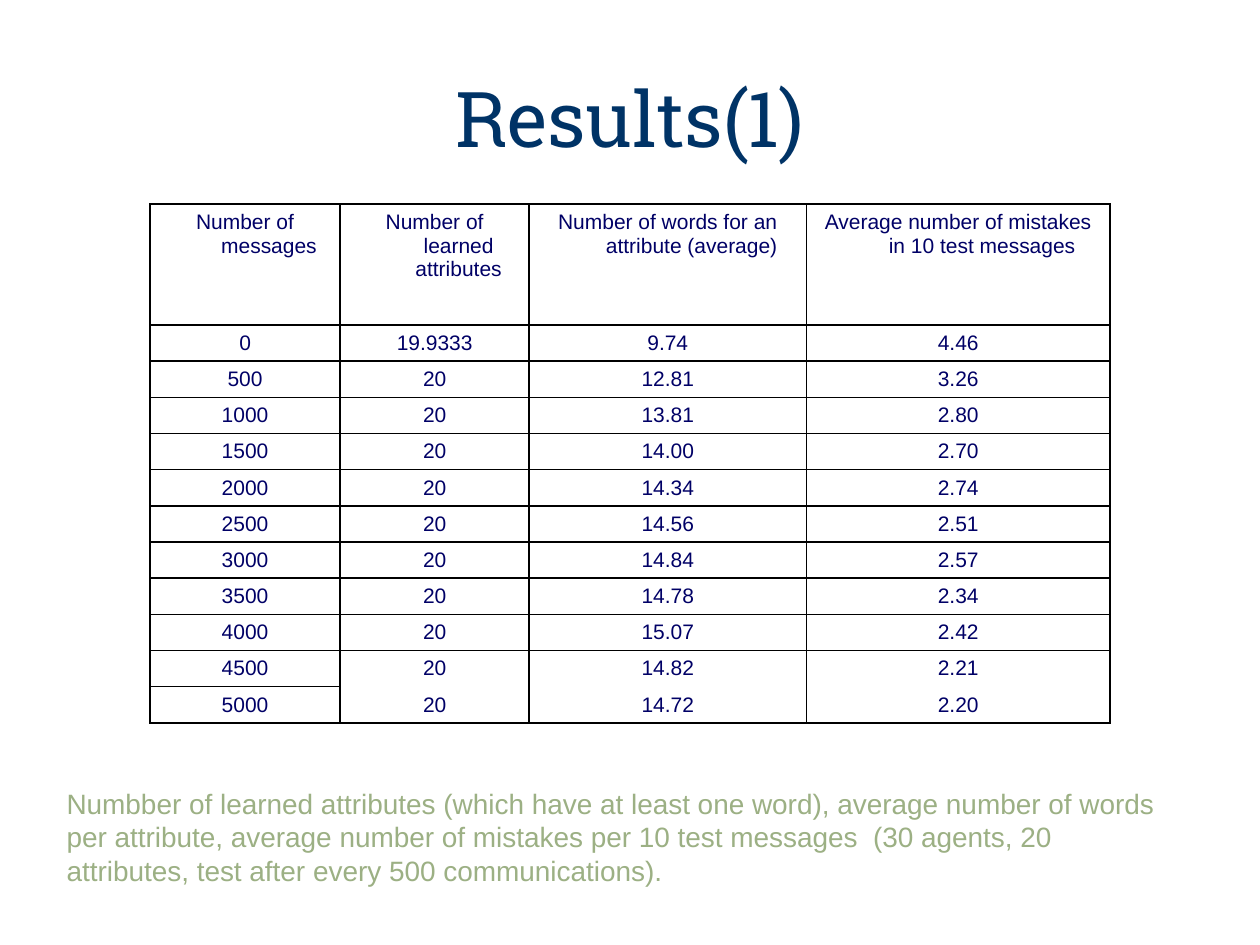
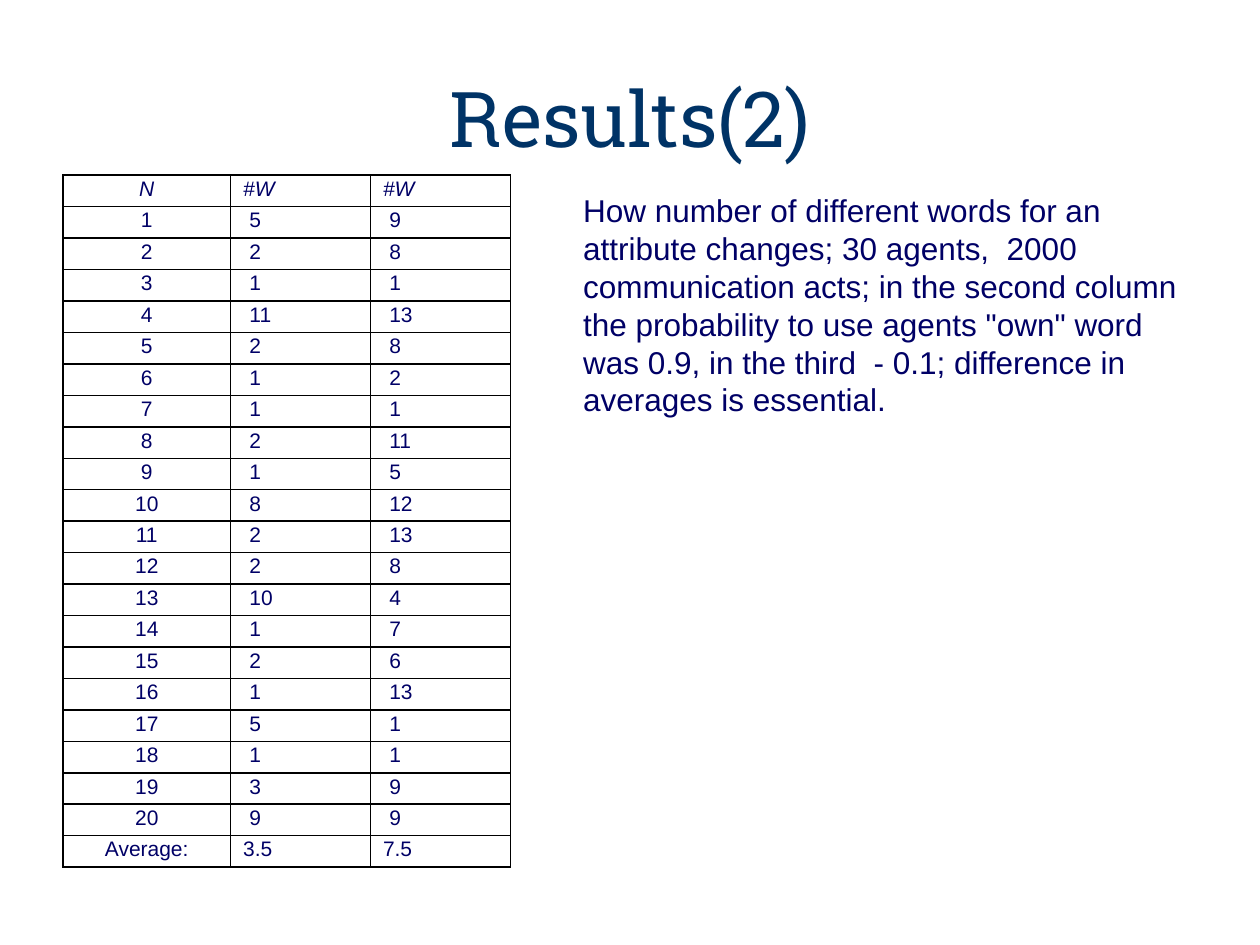
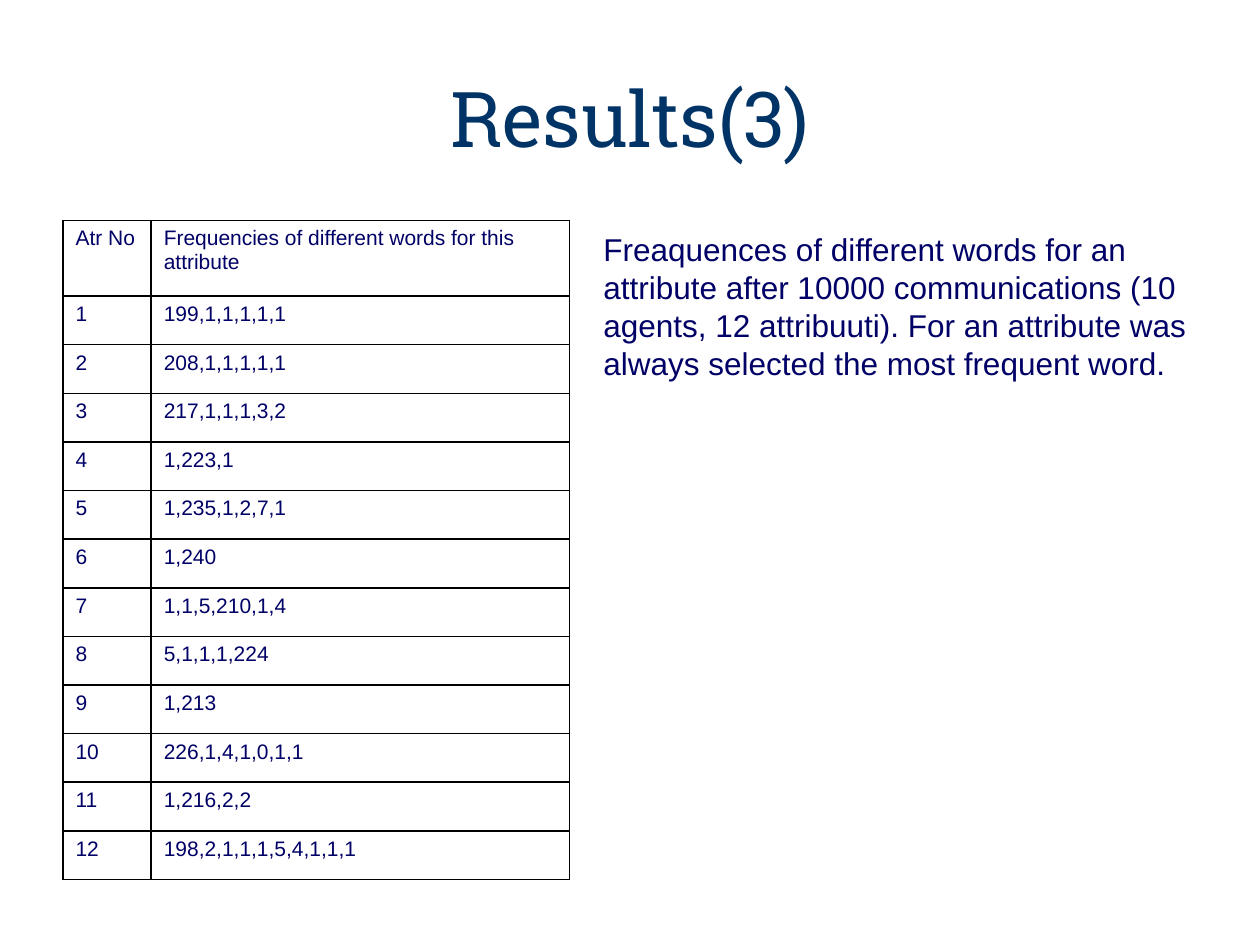
"""Build three slides of experiment results, each with a table and a caption."""
import dataclasses

import lxml.etree
import pptx
import pptx.dml.color
import pptx.enum.text
import pptx.oxml.ns
import pptx.util

Inches = pptx.util.Inches
Align = pptx.enum.text.PP_ALIGN


@dataclasses.dataclass(frozen=True)
class Theme:
    head: str = "003366"
    ink: str = "000066"
    soft: str = "9CB084"
    rule: str = "000000"
    serif: str = "Roboto Slab"
    sans: str = "Arial"
    title: int = 44
    text: int = 18
    note: int = 16
    cell: int = 12
    line: int = 1


class Deck:
    def __init__(self, theme):
        self.theme = theme
        self.show = pptx.Presentation()
        self.show.slide_width = Inches(10)
        self.show.slide_height = Inches(7.5)
        self.slide = None

    def style(self, para, face, size, tint, slant=False):
        for run in para.runs:
            font = run.font
            font.name = face
            font.size = pptx.util.Pt(size)
            font.italic = slant
            font.color.rgb = pptx.dml.color.RGBColor.from_string(tint)

    def page(self, title):
        self.slide = self.show.slides.add_slide(self.show.slide_layouts[5])
        box = self.slide.shapes.title
        box.left, box.top = Inches(0.5), Inches(0.3)
        box.width, box.height = Inches(9), Inches(1.25)
        frame = box.text_frame
        frame.text = title
        frame.vertical_anchor = pptx.enum.text.MSO_ANCHOR.MIDDLE
        para = frame.paragraphs[0]
        para.alignment = Align.CENTER
        self.style(para, self.theme.serif, self.theme.title, self.theme.head)

    def note(self, text, area, size, tint):
        box = self.slide.shapes.add_textbox(*map(Inches, area))
        frame = box.text_frame
        frame.word_wrap = True
        frame.auto_size = pptx.enum.text.MSO_AUTO_SIZE.SHAPE_TO_FIT_TEXT
        frame.text = text
        self.style(frame.paragraphs[0], self.theme.sans, size, tint)

    def edge(self, cell, bare=""):
        props = cell._tc.get_or_add_tcPr()
        qn = pptx.oxml.ns.qn
        for side in "LRTB":
            line = lxml.etree.SubElement(props, qn("a:ln" + side))
            line.set("w", str(pptx.util.Pt(self.theme.line)))
            if side in bare:
                lxml.etree.SubElement(line, qn("a:noFill"))
            else:
                fill = lxml.etree.SubElement(line, qn("a:solidFill"))
                tint = lxml.etree.SubElement(fill, qn("a:srgbClr"))
                tint.set("val", self.theme.rule)

    def table(self, rows, spot, cols, high, head, aligns,
              pad=None, space=None, slant=False, bare=None):
        size = (sum(cols), high)
        grid = self.slide.shapes.add_table(
            len(rows), len(cols), *map(Inches, spot + size)).table
        grid.first_row = grid.horz_banding = False
        for col, wide in zip(grid.columns, cols):
            col.width = Inches(wide)
        for num, row in enumerate(grid.rows):
            row.height = Inches(head if num == 0 else (high - head) / (len(rows) - 1))
            for col, cell in enumerate(row.cells):
                para = cell.text_frame.paragraphs[0]
                para.text = rows[num][col]
                para.alignment = aligns[col]
                if space:
                    para.line_spacing = space
                left, first = pad(num, col) if pad else (0, 0)
                if left:
                    props = para._p.get_or_add_pPr()
                    props.set("marL", str(Inches(left)))
                    props.set("indent", str(Inches(first)))
                self.style(para, self.theme.sans, self.theme.cell,
                           self.theme.ink, slant and num == 0)
                self.edge(cell, bare(num, col) if bare else "")
                cell.fill.background()


def growth(deck):
    names = ["Number of messages", "Number of learned attributes",
             "Number of words for an attribute (average)",
             "Average number of mistakes in 10 test messages"]
    words = "9.74 12.81 13.81 14.00 14.34 14.56 14.84 14.78 15.07 14.82 14.72".split()
    fails = "4.46 3.26 2.80 2.70 2.74 2.51 2.57 2.34 2.42 2.21 2.20".split()
    rows = [names]
    for num, pair in enumerate(zip(words, fails)):
        rows.append([str(num * 500), "20" if num else "19.9333", *pair])
    last = len(rows) - 1
    gaps = {last - 1: "B", last: "T"}
    deck.page("Results(1)")
    deck.table(rows, (1.19, 1.62), (1.51, 1.5, 2.2, 2.41), 4.12, 0.96,
               [Align.CENTER] * 4,
               pad=lambda num, col: (0.38, -0.38),
               bare=lambda num, col: gaps.get(num, "") if col else "")
    deck.note("Numbber of learned attributes (which have at least one word), "
              "average number of words per attribute, average number of mistakes "
              "per 10 test messages  (30 agents, 20 attributes, test after every "
              "500 communications).",
              (0.43, 6.19, 8.98, 0.9), deck.theme.note, deck.theme.soft)


def spread(deck):
    own = "5 2 1 11 2 1 1 2 1 8 2 2 10 1 2 1 5 1 3 9".split()
    rare = "9 8 1 13 8 2 1 11 5 12 13 8 4 7 6 13 1 1 9 9".split()
    rows = [["N", "#W", "#W"]]
    rows += [[str(num), *pair] for num, pair in enumerate(zip(own, rare), 1)]
    rows.append(["Average:", "3.5", "7.5"])
    last = len(rows) - 1
    deck.page("Results(2)")
    deck.table(rows, (0.5, 1.39), (1.33, 1.11, 1.11), 5.49, 0.25,
               [Align.CENTER, Align.LEFT, Align.LEFT], space=0.8, slant=True,
               pad=lambda num, col: (0.05 if col and 0 < num < last else 0, 0))
    deck.note("How number of different words for an attribute changes; 30 agents,  "
              "2000 communication acts; in the second column the probability to use "
              'agents "own" word was 0.9, in the third  - 0.1; difference in '
              "averages is essential.",
              (4.53, 1.47, 5.08, 1.9), deck.theme.text, deck.theme.ink)


def counts(deck):
    freqs = ["199,1,1,1,1,1", "208,1,1,1,1,1", "217,1,1,1,3,2", "1,223,1",
             "1,235,1,2,7,1", "1,240", "1,1,5,210,1,4", "5,1,1,1,224", "1,213",
             "226,1,4,1,0,1,1", "1,216,2,2", "198,2,1,1,1,5,4,1,1,1"]
    rows = [["Atr No", "Frequencies of different words for this attribute"]]
    rows += [[str(num), freq] for num, freq in enumerate(freqs, 1)]
    deck.page("Results(3)")
    deck.note("Freaquences of different words for an attribute after 10000 "
              "communications (10 agents, 12 attribuuti). For an attribute was "
              "always selected the most frequent word.",
              (4.69, 1.78, 5.08, 1.3), deck.theme.text, deck.theme.ink)
    deck.table(rows, (0.5, 1.75), (0.7, 3.32), 5.23, 0.6, [Align.LEFT] * 2)


def main():
    deck = Deck(Theme())
    for build in (growth, spread, counts):
        build(deck)
    deck.show.save("out.pptx")


if __name__ == "__main__":
    main()
